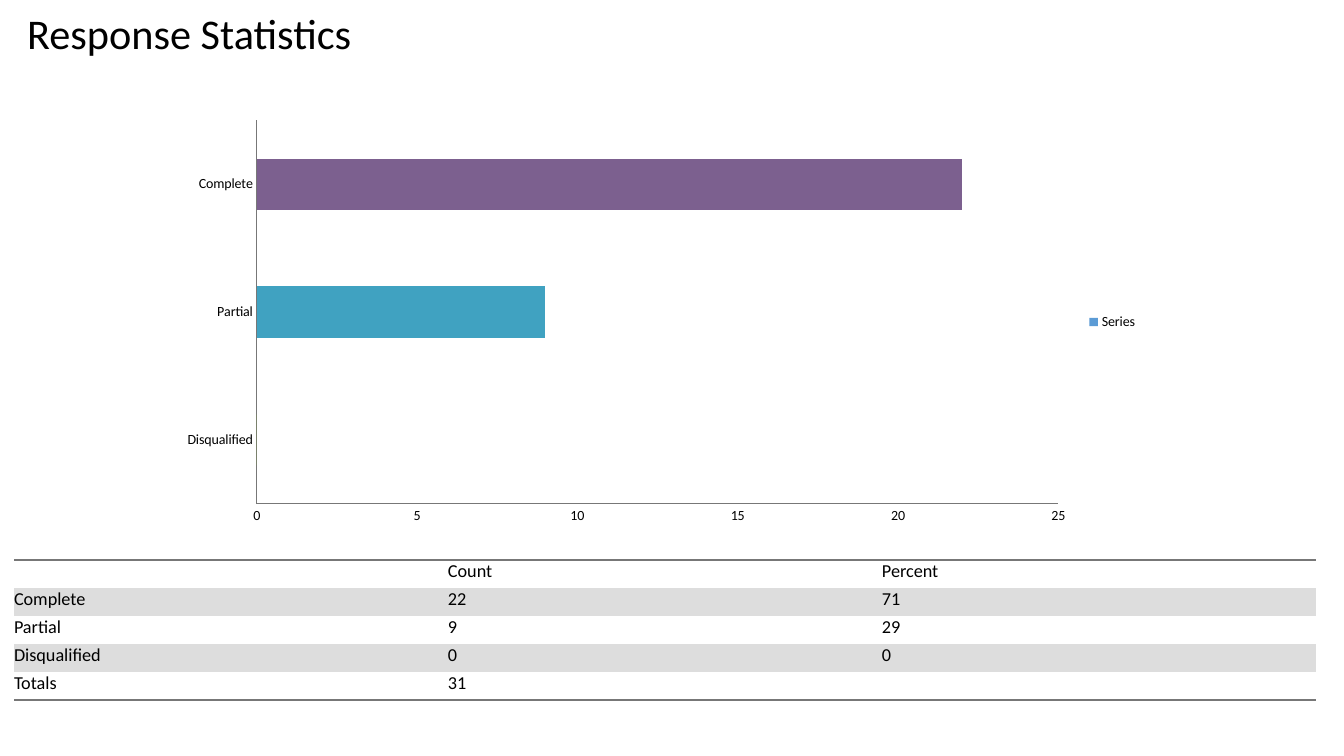
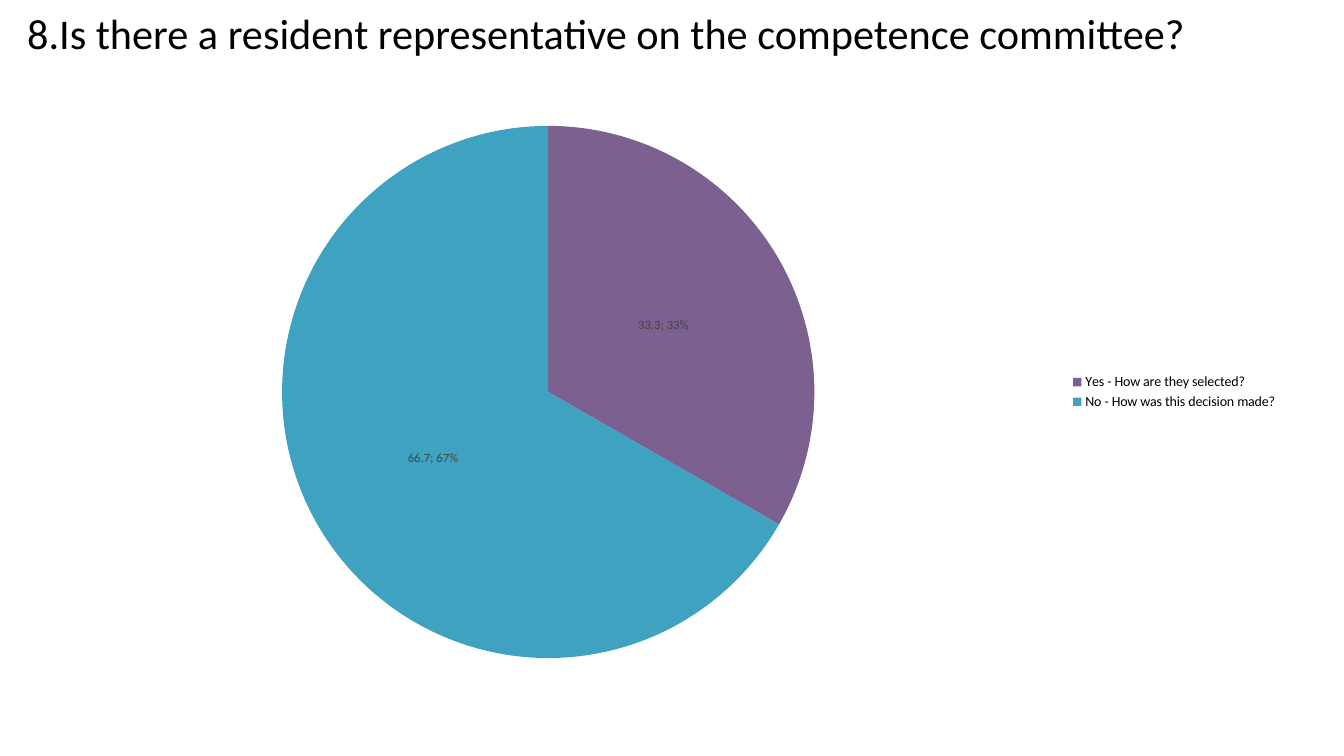
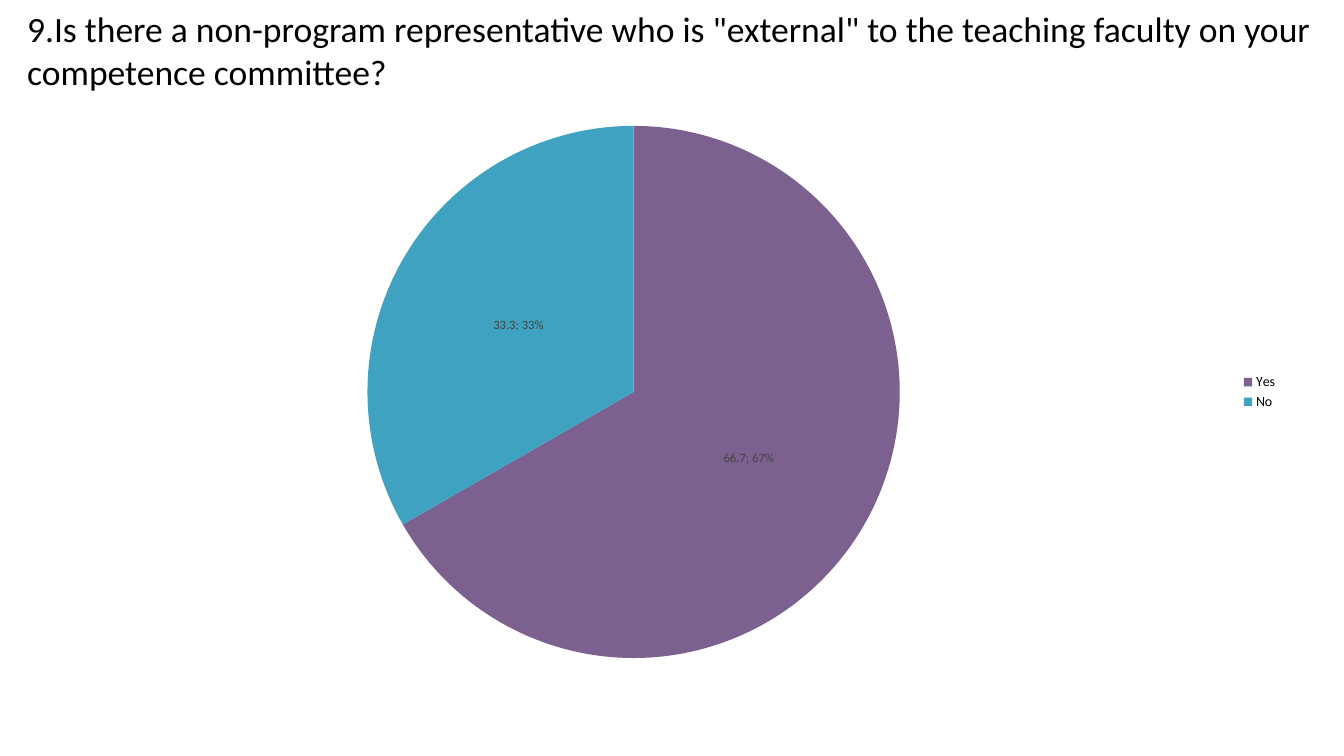
from lxml.etree import SubElement
from pptx import Presentation
from pptx.chart.data import CategoryChartData as ChartData
from pptx.dml.color import RGBColor
from pptx.enum.chart import (XL_CHART_TYPE as ChartType, XL_LABEL_POSITION as LabelPos,
                             XL_LEGEND_POSITION as LegendPos, XL_TICK_MARK as Tick)
from pptx.enum.text import MSO_ANCHOR as Anchor, MSO_AUTO_SIZE as AutoSize, PP_ALIGN as Align
from pptx.oxml.ns import qn
from pptx.util import Inches, Pt

# Shared style
BLACK = RGBColor(0x00, 0x00, 0x00)
WHITE = RGBColor(0xFF, 0xFF, 0xFF)
BAND = RGBColor(0xDD, 0xDD, 0xDD)
RULE = RGBColor(0x77, 0x77, 0x77)
LABEL = RGBColor(0x44, 0x44, 0x44)
PURPLE = RGBColor(0x7C, 0x60, 0x8F)
TEAL = RGBColor(0x40, 0xA2, 0xC1)
GREEN = RGBColor(0x94, 0xC8, 0x26)
BLUE = RGBColor(0x5B, 0x9B, 0xD5)
FONT = "Calibri"
NO_STYLE = "{2D5ABB26-0587-4C30-8999-92F81FD0307C}"
COLUMNS, ROWS = 96, 54


def set_font(font, size, color=BLACK):
    font.name, font.size, font.color.rgb = FONT, Pt(size), color


def write_text(frame, text, size=13, color=BLACK, align=Align.LEFT):
    paragraph = frame.paragraphs[0]
    paragraph.alignment = align
    if text:
        run = paragraph.add_run()
        run.text = text
        set_font(run.font, size, color)
    else:  # keeps an empty cell as low as its row
        SubElement(paragraph._p, qn("a:endParaRPr"), sz=str(size * 100))


class Deck:
    def __init__(self):
        self.show = Presentation()
        self.show.slide_width, self.show.slide_height = Inches(13.33), Inches(7.5)
        self.slide = None

    def area(self, column, row, columns, rows):
        across, down = self.show.slide_width / COLUMNS, self.show.slide_height / ROWS
        return [int(n * step) for n, step in
                zip((column, row, columns, rows), (across, down, across, down))]

    def add_slide(self, heading, size=30.2):
        self.slide = self.show.slides.add_slide(self.show.slide_layouts[5])
        title = self.slide.shapes.title
        title.left, title.top, title.width, title.height = self.area(1, 0, 95, 6)
        frame = title.text_frame
        frame.word_wrap, frame.auto_size = True, AutoSize.NONE
        frame.vertical_anchor = Anchor.TOP
        frame.margin_left = frame.margin_right = Inches(0.13)
        frame.margin_top = frame.margin_bottom = Inches(0.07)
        write_text(frame, heading, size=size)

    def add_chart(self, kind, place, name, values, colors):
        data = ChartData()
        data.categories = list(values)
        data.add_series(name, list(values.values()))
        chart = self.slide.shapes.add_chart(kind, *self.area(*place), data).chart
        set_font(chart.font, 10)
        chart.has_title = False
        chart.has_legend = True
        chart.legend.position = LegendPos.RIGHT
        chart.legend.include_in_layout = False
        set_font(chart.legend.font, 10)
        series = chart.plots[0].series[0]
        for index, color in enumerate(colors):
            fill = series.points[index].format.fill
            fill.solid()
            fill.fore_color.rgb = color
        return chart

    def add_bars(self, place, name, values, colors):
        chart = self.add_chart(ChartType.BAR_CLUSTERED, place, name, values, colors)
        plot = chart.plots[0]
        plot.gap_width, plot.vary_by_categories = 150, False
        fill = plot.series[0].format.fill
        fill.solid()
        fill.fore_color.rgb = BLUE
        for axis in (chart.category_axis, chart.value_axis):
            axis.has_major_gridlines = False
            axis.major_tick_mark = axis.minor_tick_mark = Tick.NONE
            axis.format.line.color.rgb = RULE
            axis.format.line.width = Pt(1)

    def add_pie(self, values):
        chart = self.add_chart(ChartType.PIE, (2, 8, 90, 40), "Series 1", values,
                               (PURPLE, TEAL))
        labels = chart.plots[0].series[0].data_labels
        labels.show_value = labels.show_percentage = True
        labels.number_format, labels.number_format_is_linked = "#%", False
        labels.position = LabelPos.CENTER
        set_font(labels.font, 9, LABEL)
        dlbls = labels._element
        separator = SubElement(dlbls, qn("c:separator"))
        separator.text = "; "
        dlbls.find(qn("c:showBubbleSize")).addnext(separator)

    def add_table(self, place, lines):
        table = self.slide.shapes.add_table(len(lines), len(lines[0]), *self.area(*place)).table
        table.first_row = table.horz_banding = False
        table._tbl.tblPr.find(qn("a:tableStyleId")).text = NO_STYLE
        for row, line in enumerate(lines):
            for column, text in enumerate(line):
                cell = table.cell(row, column)
                cell.margin_left = cell.margin_right = cell.margin_top = cell.margin_bottom = 0
                cell.fill.solid()
                cell.fill.fore_color.rgb = BAND if row % 2 else WHITE
                write_text(cell.text_frame, text)
                if row == 0:
                    self.rule(cell, "a:lnT")
                elif row == len(lines) - 1:
                    self.rule(cell, "a:lnB")
        return table

    def rule(self, cell, side):
        properties = cell._tc.get_or_add_tcPr()
        line = SubElement(properties, qn(side), w=str(Pt(2)))
        SubElement(SubElement(line, qn("a:solidFill")), qn("a:srgbClr"), val=str(RULE))
        properties.insert(0, line)


deck = Deck()

# Response statistics
deck.add_slide("Response Statistics")
deck.add_bars((12, 8, 70, 30), "Series",
              {"Disqualified": 0, "Partial": 9, "Complete": 22}, (GREEN, TEAL, PURPLE))
responses = deck.add_table((1, 40, 93, 10), [
    ("", "Count", "Percent"),
    ("Complete", "22", "71"),
    ("Partial", "9", "29"),
    ("Disqualified", "0", "0"),
    ("Totals", "31", ""),
])
responses.cell(4, 1).merge(responses.cell(4, 2))

# Resident representative
deck.add_slide("8.Is there a resident representative on the competence committee?")
deck.add_pie({"Yes - How are they selected?": 33.3, "No - How was this decision made?": 66.7})

# External representative
deck.add_slide('9.Is there a non-program representative who is "external" to the teaching '
               'faculty on your competence committee?', size=25.4)
deck.add_pie({"Yes": 66.7, "No": 33.3})

deck.show.save("out.pptx")
